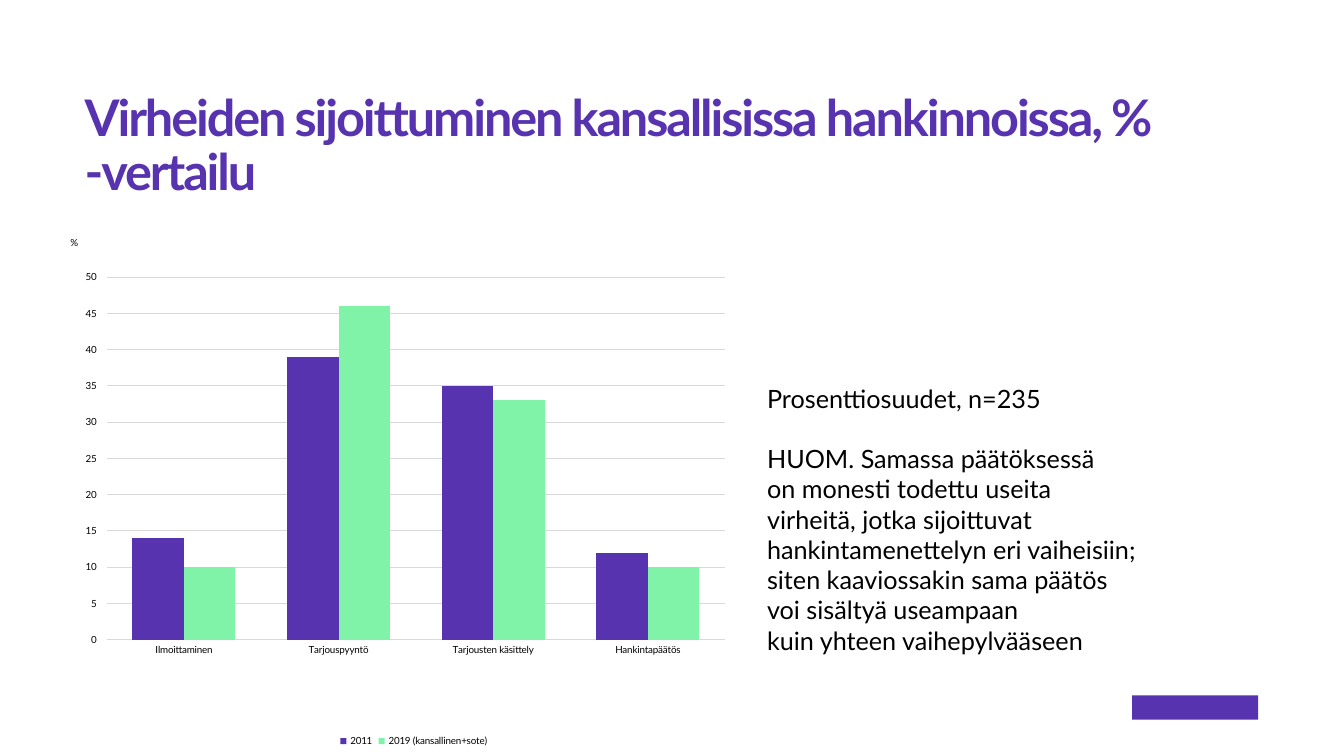
"""Build a slide that compares where errors occur in national procurement."""
from dataclasses import dataclass

from lxml.etree import SubElement
from pptx import Presentation
from pptx.chart.data import CategoryChartData as Data
from pptx.dml.color import RGBColor
from pptx.enum.chart import XL_CHART_TYPE as Kind
from pptx.enum.chart import XL_LEGEND_POSITION as Side
from pptx.enum.chart import XL_TICK_MARK as Tick
from pptx.enum.shapes import MSO_SHAPE as Shape
from pptx.enum.text import MSO_ANCHOR as Anchor
from pptx.enum.text import MSO_AUTO_SIZE as Fit
from pptx.enum.text import PP_ALIGN as Align
from pptx.oxml.ns import qn
from pptx.oxml.xmlchemy import OxmlElement as Element
from pptx.util import Pt

FONT = "Lato"
PURPLE, GREEN, GREY, BLACK = "5733AF", "81F3A9", "D9D9D9", "000000"
TITLE = "Virheiden sijoittuminen kansallisissa hankinnoissa, % -vertailu"
STAGES = ["Ilmoittaminen", "Tarjouspyyntö", "Tarjousten käsittely", "Hankintapäätös"]


@dataclass
class Year:
    name: str
    shares: list[int]
    color: str


@dataclass
class Note:
    text: str
    gap: float = 0


YEARS = [
    Year("2011", [14, 39, 35, 12], PURPLE),
    Year("2019 (kansallinen+sote)", [10, 46, 33, 10], GREEN),
]
NOTES = [
    Note("Prosenttiosuudet, n=235"),
    Note("HUOM. Samassa päätöksessä", 21.6),
    Note("on monesti todettu useita"),
    Note("virheitä, jotka sijoittuvat"),
    Note("hankintamenettelyn eri vaiheisiin;"),
    Note("siten kaaviossakin sama päätös"),
    Note("voi sisältyä useampaan"),
    Note("kuin yhteen vaihepylvääseen"),
]


def paint(target, color: str) -> None:
    target.solid()
    target.fore_color.rgb = RGBColor.from_string(color)


def style(font, size: float, color: str = BLACK, bold: bool = False) -> None:
    font.name, font.size, font.bold = FONT, Pt(size), bold
    font.color.rgb = RGBColor.from_string(color)


def bare(frame) -> None:
    frame.margin_left = frame.margin_right = frame.margin_top = frame.margin_bottom = 0
    frame.word_wrap = True
    frame.auto_size = Fit.NONE
    frame.vertical_anchor = Anchor.TOP


def rule(line) -> None:
    paint(line.fill, GREY)
    line.width = Pt(0.75)


def place(holder, **parts) -> None:
    layout = Element("c:layout")
    manual = SubElement(layout, qn("c:manualLayout"))
    for tag, val in parts.items():
        SubElement(manual, qn(f"c:{tag}")).set("val", str(val))
    old = holder.find(qn("c:layout"))
    if old is None:
        holder.insert(0, layout)
    else:
        holder.replace(old, layout)


def add_title(slide) -> None:
    title = slide.shapes.title
    title.left, title.top, title.width, title.height = Pt(60.5), Pt(66.2), Pt(839.5), Pt(45.4)
    bare(title.text_frame)
    line = title.text_frame.paragraphs[0]
    line.text = TITLE
    line.alignment = Align.LEFT
    line.line_spacing = 0.9
    style(line.font, 36, PURPLE, True)
    line._p.pPr.find(qn("a:defRPr")).set("spc", "-150")


def add_bars(slide) -> None:
    data = Data(number_format="0")
    data.categories = STAGES
    for year in YEARS:
        data.add_series(year.name, year.shares)
    chart = slide.shapes.add_chart(
        Kind.COLUMN_CLUSTERED, Pt(49), Pt(139.7), Pt(493.2), Pt(396.7), data
    ).chart
    chart.has_title = False
    style(chart.font, 7)
    area = chart._chartSpace.chart.plotArea
    place(area, layoutTarget="inner", xMode="edge", yMode="edge",
          x=0.055, y=0.147, w=0.896, h=0.653)

    plot = chart.plots[0]
    plot.gap_width, plot.overlap, plot.vary_by_categories = 100, 0, False
    for series, year in zip(plot.series, YEARS):
        paint(series.format.fill, year.color)

    stage = chart.category_axis
    stage.major_tick_mark = stage.minor_tick_mark = Tick.NONE
    style(stage.tick_labels.font, 7)
    rule(stage.format.line)

    share = chart.value_axis
    share.minimum_scale, share.maximum_scale, share.major_unit = 0, 50, 5
    share.major_tick_mark, share.minor_tick_mark = Tick.OUTSIDE, Tick.NONE
    style(share.tick_labels.font, 7)
    share.format.line.fill.background()
    rule(share.major_gridlines.format.line)
    frame = share.axis_title.text_frame
    frame.text = "%"
    style(frame.paragraphs[0].font, 7)
    body = frame._txBody.find(qn("a:bodyPr"))
    body.set("rot", "0")
    body.set("vert", "horz")
    place(share.axis_title._element, xMode="edge", yMode="edge", x=0, y=0.07)

    chart.has_legend = True
    chart.legend.position = Side.BOTTOM
    chart.legend.include_in_layout = False
    style(chart.legend.font, 7)


def add_notes(slide) -> None:
    box = slide.shapes.add_textbox(Pt(547.9), Pt(273.6), Pt(400), Pt(206))
    frame = box.text_frame
    bare(frame)
    for i, note in enumerate(NOTES):
        line = frame.add_paragraph() if i else frame.paragraphs[0]
        line.text = note.text
        if note.gap:
            line.space_before = Pt(note.gap)
        style(line.font, 18)


def add_mark(slide) -> None:
    mark = slide.shapes.add_shape(Shape.RECTANGLE, Pt(808.6), Pt(496.8), Pt(90), Pt(17.3))
    mark.shadow.inherit = False
    paint(mark.fill, PURPLE)
    mark.line.fill.background()


def main() -> None:
    deck = Presentation()
    deck.slide_width, deck.slide_height = Pt(960), Pt(540)
    slide = deck.slides.add_slide(deck.slide_layouts[5])
    add_mark(slide)
    add_title(slide)
    add_bars(slide)
    add_notes(slide)
    deck.save("out.pptx")


if __name__ == "__main__":
    main()
